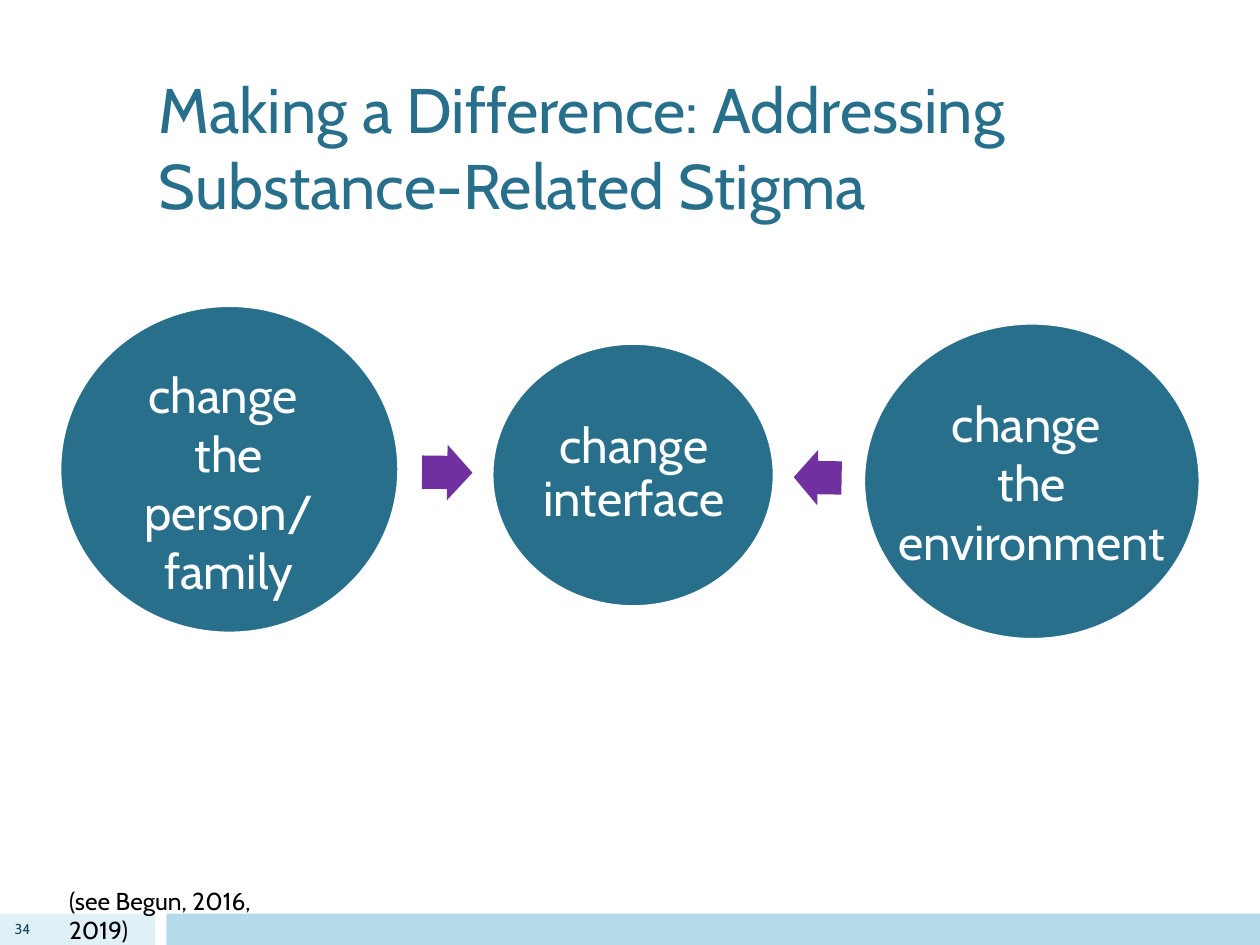
from pptx import Presentation
from pptx.dml.color import RGBColor
from pptx.enum.shapes import MSO_SHAPE
from pptx.enum.text import MSO_ANCHOR, MSO_AUTO_SIZE, PP_ALIGN
from pptx.util import Inches, Pt

deck = Presentation()
deck.slide_width, deck.slide_height = Inches(10), Inches(7.5)
col, row = deck.slide_width / 100, deck.slide_height / 75
slide = deck.slides.add_slide(deck.slide_layouts[5])
shapes = slide.shapes
teal, white = "276F8B", "FFFFFF"


def draw(kind, spot, fill, line=None):
    x, y, w, h = spot
    shape = shapes.add_shape(kind, int(x * col), int(y * row), int(w * col), int(h * row))
    shape.shadow.inherit = False
    shape.fill.solid()
    shape.fill.fore_color.rgb = RGBColor.from_string(fill)
    if line:
        shape.line.color.rgb = RGBColor.from_string(line)
        shape.line.width = Pt(1)
    else:
        shape.line.fill.background()
    return shape


def write(lines, spot, size, color, align=PP_ALIGN.LEFT, anchor=MSO_ANCHOR.TOP, box=None):
    x, y, w, h = spot
    box = box or shapes.add_textbox(0, 0, 0, 0)
    box.left, box.top, box.width, box.height = int(x * col), int(y * row), int(w * col), int(h * row)
    frame = box.text_frame
    frame.text = "\n".join(lines)
    frame.word_wrap = True
    frame.auto_size = MSO_AUTO_SIZE.NONE
    frame.vertical_anchor = anchor
    for para in frame.paragraphs:
        para.alignment = align
        para.font.name = "Cabin"
        para.font.size = Pt(size)
        para.font.color.rgb = RGBColor.from_string(color)
    return frame


for left, width, fill in [(0, 12.3, "DFF0F6"), (13.2, 86.8, "B5DBEA")]:
    draw(MSO_SHAPE.RECTANGLE, (left, 72.5, width, 2.5), fill)

goals = [
    (["change ", "the person/ family"], (4.8, 24.3, 26.8, 25.9), (9.4, 29.7, 17.5, 17.1), 1),
    (["change interface"], (39.1, 27.3, 22.3, 20.8), (42.4, 30.3, 15.8, 14.7), 0.9),
    (["change ", "the environment"], (68.6, 25.7, 26.6, 25), (70.6, 30.1, 22.6, 16.3), 1),
]
for lines, disc, label, space in goals:
    draw(MSO_SHAPE.OVAL, disc, teal, white)
    frame = write(lines, label, 28, white, PP_ALIGN.CENTER, MSO_ANCHOR.MIDDLE)
    frame.margin_left = frame.margin_right = Inches(0.04)
    frame.margin_top = frame.margin_bottom = Inches(0.04)
    for para in frame.paragraphs:
        para.line_spacing = space

for spot, turn in [((33.5, 35.3, 4, 4.4), 0.7), ((63, 35.7, 3.8, 4.4), 181)]:
    arrow = draw(MSO_SHAPE.RIGHT_ARROW, spot, "7030A0")
    arrow.adjustments[0] = 0.6
    arrow.adjustments[1] = 0.5
    arrow.rotation = turn

write(["Making a Difference: Addressing Substance-Related Stigma"],
      (11.6, 5.1, 76.9, 12.9), 36, teal, box=shapes.title)
write(["(see Begun, 2016, 2019)"], (4.5, 69.8, 21.3, 3.4), 14, "000000")
page = write(["34"], (0, 72.5, 3.4, 2.5), 8.2, "1A4A5D", PP_ALIGN.RIGHT, MSO_ANCHOR.MIDDLE)
page.margin_left = 0

deck.save("out.pptx")
